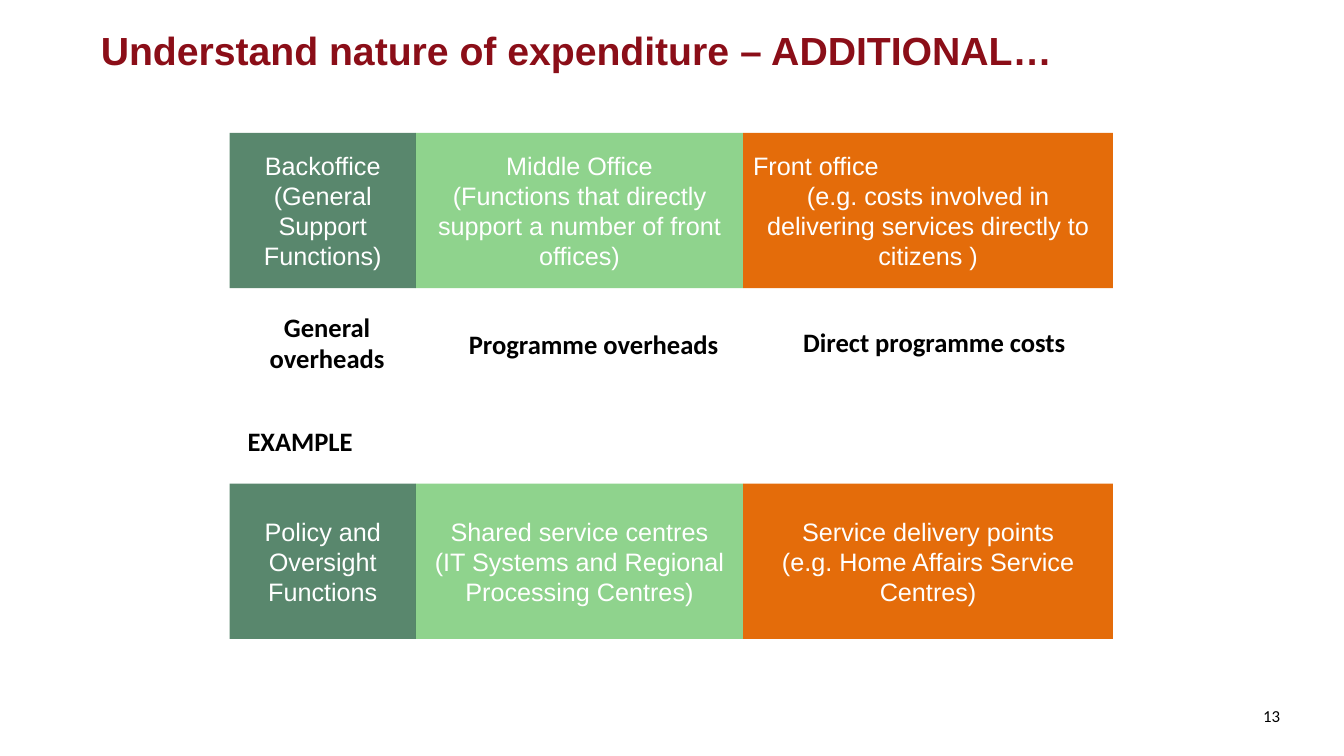
from dataclasses import dataclass
from typing import Optional

import lxml.etree
import pptx
import pptx.dml.color
import pptx.enum.shapes
import pptx.enum.text
import pptx.oxml.ns
import pptx.util

Cm = pptx.util.Cm
RGBColor = pptx.dml.color.RGBColor
Align = pptx.enum.text.PP_ALIGN
Anchor = pptx.enum.text.MSO_ANCHOR

DARK_RED = RGBColor(0x8B, 0x0E, 0x18)
BACK_GREEN = RGBColor(0x59, 0x87, 0x6D)
MIDDLE_GREEN = RGBColor(0x12, 0xA2, 0x0E)
FRONT_ORANGE = RGBColor(0xE4, 0x6C, 0x0A)
WHITE = RGBColor(0xFF, 0xFF, 0xFF)
BLACK = RGBColor(0x00, 0x00, 0x00)


@dataclass(frozen=True)
class Style:
    font: str
    size: int
    color: RGBColor
    bold: bool = False
    align: Align = Align.CENTER
    anchor: Anchor = Anchor.MIDDLE


@dataclass(frozen=True)
class Block:
    """A text block; lengths in centimetres."""
    text: str
    left: float
    top: float
    width: float
    height: float
    style: Style
    fill: Optional[RGBColor] = None
    opacity: int = 100


@dataclass(frozen=True)
class Office:
    width: float
    fill: RGBColor
    opacity: int
    role: str
    example: str


TITLE = Style("Arial", 28, DARK_RED, True, Align.LEFT)
OFFICE = Style("Arial", 18, WHITE)
LABEL = Style("Calibri", 19, BLACK, True, anchor=Anchor.TOP)
HEADING = Style("Calibri", 19, BLACK, True, Align.LEFT, Anchor.TOP)
PAGE_NUMBER = Style("Calibri", 12, BLACK, align=Align.RIGHT)

BAND_LEFT, BAND_HEIGHT = 5.79, 3.91
ROLE_TOP, EXAMPLE_TOP = 3.35, 12.19

OFFICES = [
    Office(4.69, BACK_GREEN, 100,
           "Backoffice\n(General Support Functions)",
           "Policy and Oversight Functions"),
    Office(8.25, MIDDLE_GREEN, 47,
           "Middle Office\n(Functions that directly support a number of front offices)",
           "Shared service centres\n(IT Systems and Regional Processing Centres)"),
    Office(9.32, FRONT_ORANGE, 100,
           "Front office\n(e.g. costs involved in delivering services directly to citizens )",
           "Service delivery points\n(e.g. Home Affairs Service Centres)"),
]

CAPTIONS = [
    Block("Direct programme costs", 18.95, 8.1, 9.19, 1.07, LABEL, WHITE),
    Block("Programme overheads", 10.82, 8.13, 8.28, 1.07, LABEL, WHITE),
    Block("General overheads", 5.64, 7.7, 5.21, 1.88, LABEL, WHITE),
    Block("EXAMPLE", 5.99, 10.59, 6.88, 1.07, HEADING, WHITE),
]


def add_block(slide: pptx.slide.Slide, block: Block) -> pptx.text.text.TextFrame:
    box = (Cm(block.left), Cm(block.top), Cm(block.width), Cm(block.height))
    if block.fill is None:
        shape = slide.shapes.add_textbox(*box)
    else:
        shape = slide.shapes.add_shape(pptx.enum.shapes.MSO_SHAPE.RECTANGLE, *box)
        shape.shadow.inherit = False
        shape.line.fill.background()
        shape.fill.solid()
        shape.fill.fore_color.rgb = block.fill
        if block.opacity < 100:
            qn = pptx.oxml.ns.qn
            color = shape.fill._xPr.find(qn("a:solidFill")).find(qn("a:srgbClr"))
            lxml.etree.SubElement(color, qn("a:alpha"), val=str(block.opacity * 1000))

    style = block.style
    frame = shape.text_frame
    frame.word_wrap = True
    frame.vertical_anchor = style.anchor
    frame.text = block.text
    for paragraph in frame.paragraphs:
        paragraph.alignment = style.align
        for run in paragraph.runs:
            run.font.name = style.font
            run.font.size = pptx.util.Pt(style.size)
            run.font.bold = style.bold
            run.font.color.rgb = style.color
    return frame


def add_band(slide: pptx.slide.Slide, top: float,
             texts: list[str]) -> list[pptx.text.text.TextFrame]:
    """Draw the three offices side by side, each with its text."""
    frames = []
    left = BAND_LEFT
    for office, text in zip(OFFICES, texts):
        frames.append(add_block(slide, Block(
            text, left, top, office.width, BAND_HEIGHT, OFFICE, office.fill, office.opacity)))
        left += office.width
    return frames


def main() -> None:
    deck = pptx.Presentation()
    deck.slide_width, deck.slide_height = Cm(33.87), Cm(19.05)
    slide = deck.slides.add_slide(deck.slide_layouts[6])

    # Title and page number
    add_block(slide, Block("Understand nature of expenditure – ADDITIONAL…",
                           2.29, 0.69, 29.24, 1.14, TITLE))
    add_block(slide, Block("13", 30.58, 17.55, 1.93, 0.99, PAGE_NUMBER))

    # Office roles; the front office name stands at the left edge
    front_office = add_band(slide, ROLE_TOP, [office.role for office in OFFICES])[-1]
    front_office.paragraphs[0].alignment = Align.LEFT

    # Cost captions and example heading
    for caption in CAPTIONS:
        add_block(slide, caption)

    # Example of each office
    add_band(slide, EXAMPLE_TOP, [office.example for office in OFFICES])

    deck.save("out.pptx")


if __name__ == "__main__":
    main()
